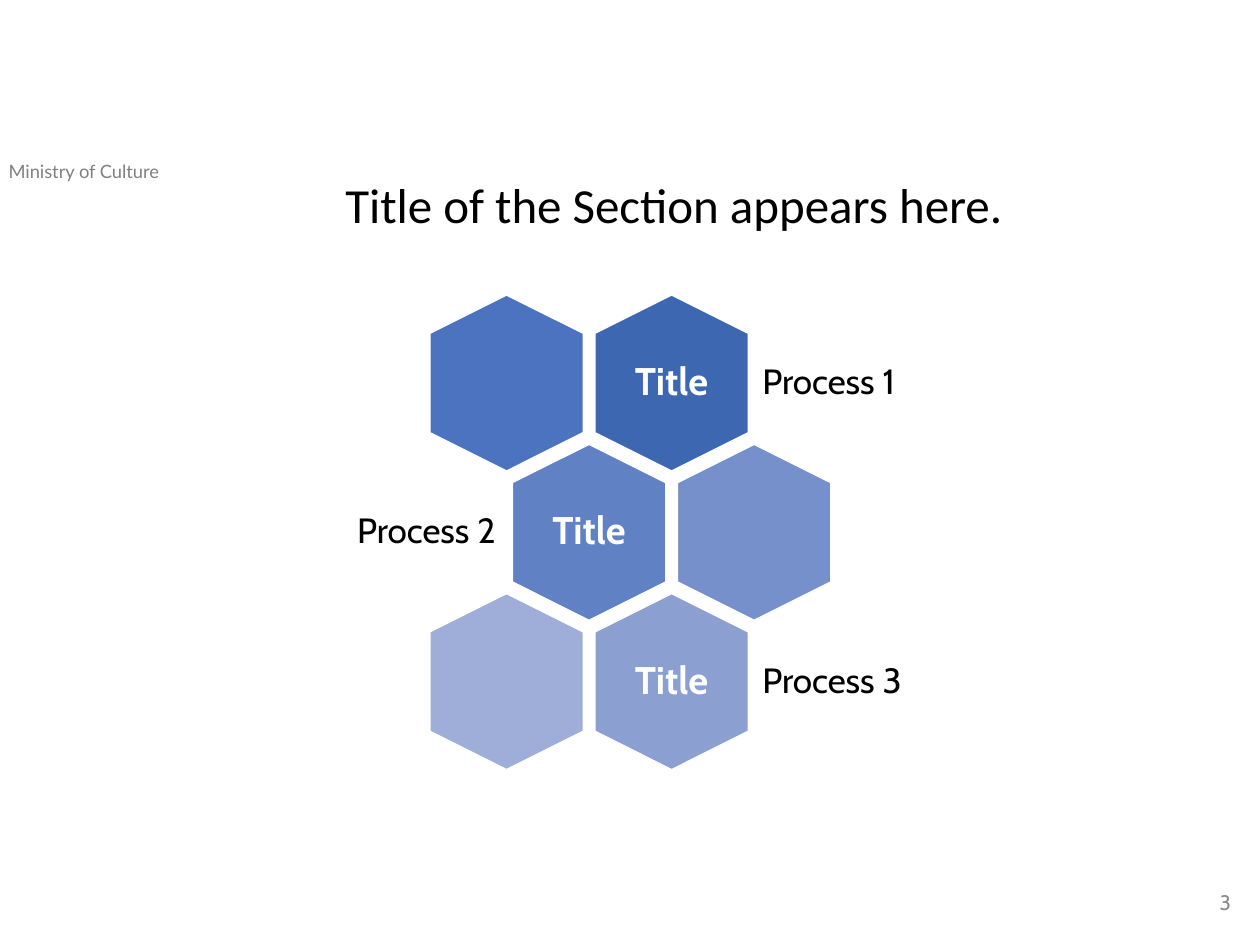
import pptx
import pptx.util
import pptx.dml.color
import pptx.enum.shapes
import pptx.enum.text

Inches = pptx.util.Inches
Pt = pptx.util.Pt
Align = pptx.enum.text.PP_ALIGN
Anchor = pptx.enum.text.MSO_ANCHOR

COLORS = {
    "white": "FFFFFF", "black": "000000", "head": "808080", "number": "8C8C8C",
    "blue1": "3E67B2", "blue2": "4C73BF", "blue3": "6181C5",
    "blue4": "7690CB", "blue5": "8B9FD1", "blue6": "9FAED8",
}
HEX_W, HEX_H = 1.4, 1.22
LEFT, TOP = 3.32, 2.43
STEP_X, STEP_Y = 1.31, 1.185


def color(name):
    return pptx.dml.color.RGBColor.from_string(COLORS[name])


def write(shape, text, font="Cabin", size=20, ink="black", bold=False,
          align=Align.LEFT, anchor=Anchor.MIDDLE, spacing=None, inset=None):
    frame = shape.text_frame
    frame.word_wrap = True
    frame.auto_size = pptx.enum.text.MSO_AUTO_SIZE.NONE
    frame.vertical_anchor = anchor
    if inset is not None:
        frame.margin_left = frame.margin_right = Inches(inset)
        frame.margin_top = frame.margin_bottom = Inches(inset)
    frame.text = text
    para = frame.paragraphs[0]
    para.alignment = align
    if spacing:
        para.line_spacing = spacing
    run = para.runs[0].font
    run.name, run.size, run.bold = font, Pt(size), bold
    run.color.rgb = color(ink)


class Deck:
    def __init__(self):
        self.show = pptx.Presentation()
        self.show.slide_width = Inches(10)
        self.show.slide_height = Inches(7.5)
        self.slide = self.show.slides.add_slide(self.show.slide_layouts[5])

    def title(self, text, left, top, width, height):
        shape = self.slide.shapes.title
        shape.left, shape.top = Inches(left), Inches(top)
        shape.width, shape.height = Inches(width), Inches(height)
        write(shape, text, font="Calibri", size=28, anchor=Anchor.TOP, spacing=0.9)

    def text(self, text, left, top, width, height, **style):
        box = self.slide.shapes.add_textbox(
            Inches(left), Inches(top), Inches(width), Inches(height))
        write(box, text, **style)

    def hexagon(self, left, top, fill):
        shape = self.slide.shapes.add_shape(
            pptx.enum.shapes.MSO_SHAPE.HEXAGON,
            Inches(left), Inches(top), Inches(HEX_W), Inches(HEX_H))
        shape.adjustments[0] = 0.25
        shape.adjustments[1] = 1.1547
        shape.rotation = 90
        shape.shadow.inherit = False
        shape.fill.solid()
        shape.fill.fore_color.rgb = color(fill)
        shape.line.color.rgb = color("white")
        shape.line.width = Pt(1)

    def process(self, row, label, main, side):
        """Draw one row: a titled hexagon, its plain neighbour and its label."""
        odd = row % 2
        start = LEFT + odd * STEP_X / 2
        top = TOP + row * STEP_Y
        left = start if odd else start + STEP_X
        other = start + STEP_X if odd else start
        self.hexagon(left, top, main)
        self.text("Title", left + 0.28, top + 0.13, 0.84, 0.96, size=22,
                  ink="white", bold=True, align=Align.CENTER, spacing=0.9, inset=0.09)
        offset, width, align = (
            (-1.47, 1.51, Align.RIGHT) if odd else (1.34, 1.56, Align.LEFT))
        self.text(label, left + offset, top + 0.19, width, 0.84,
                  align=align, spacing=0.9, inset=0.08)
        self.hexagon(other, top, side)


def main():
    deck = Deck()
    deck.text("Ministry of Culture", -0.03, 1.22, 2.18, 0.28,
              font="Lato", size=10.5, ink="head", anchor=Anchor.TOP)
    deck.title("Title of the Section appears here.", 2.64, 1.39, 5.67, 0.79)
    fills = [("blue1", "blue2"), ("blue3", "blue4"), ("blue5", "blue6")]
    for row, (main_fill, side_fill) in enumerate(fills):
        deck.process(row, f"Process {row + 1}", main_fill, side_fill)
    deck.text("3", 7.62, 6.96, 2.25, 0.4, size=12, ink="number", align=Align.RIGHT)
    deck.show.save("out.pptx")


if __name__ == "__main__":
    main()
